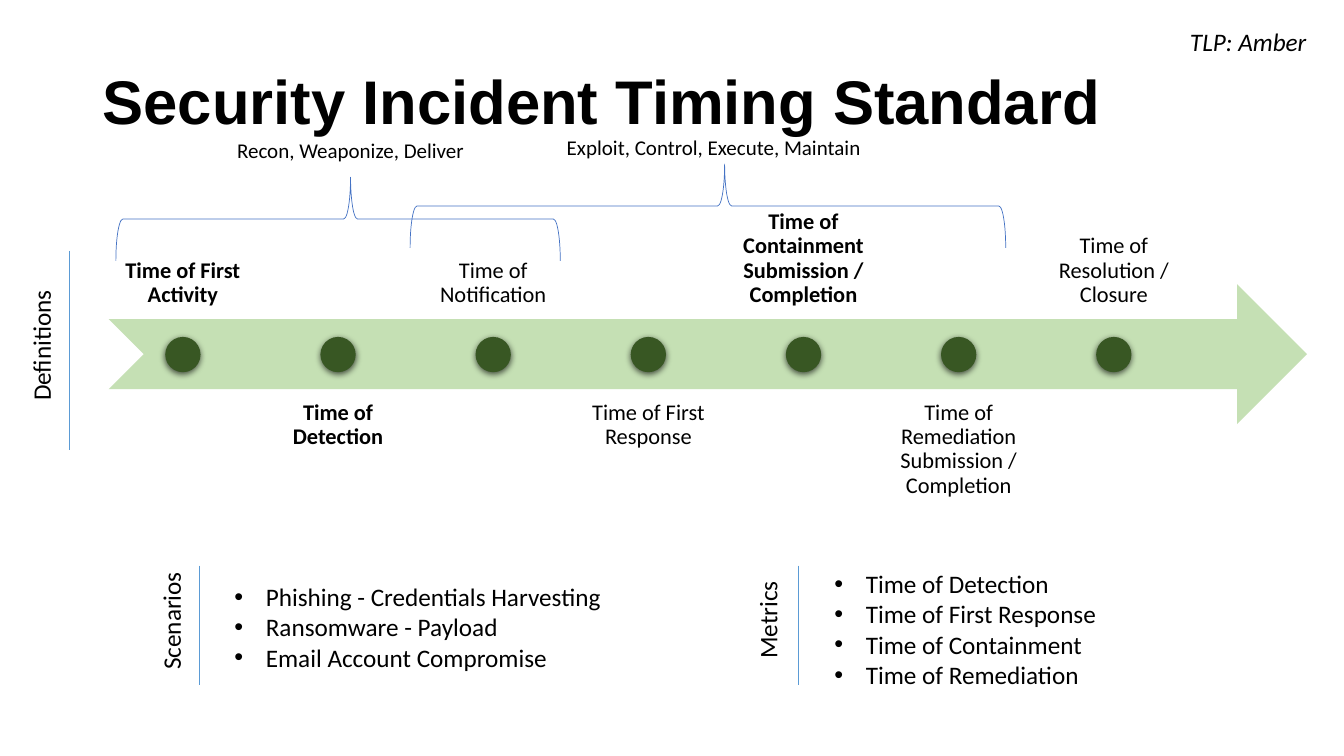
"""Build the security incident timing standard slide."""
import pptx
import pptx.dml.color
import pptx.enum.shapes
import pptx.enum.text
import pptx.oxml
import pptx.oxml.ns
import pptx.util

Cm = pptx.util.Cm
Pt = pptx.util.Pt
RGBColor = pptx.dml.color.RGBColor
SHAPE = pptx.enum.shapes.MSO_SHAPE
ANCHOR = pptx.enum.text.MSO_ANCHOR
ALIGN = pptx.enum.text.PP_ALIGN

BLACK = RGBColor(0x00, 0x00, 0x00)
LIGHT_GREEN = RGBColor(0xC5, 0xE0, 0xB4)
DARK_GREEN = RGBColor(0x38, 0x57, 0x23)
RULE_BLUE = RGBColor(0x5B, 0x9B, 0xD5)
BRACE_BLUE = RGBColor(0x44, 0x72, 0xC4)

TITLE = "Security Incident Timing Standard"
MARKING = "TLP: Amber"
MILESTONES = [
    ("Time of First Activity", True),
    ("Time of Detection", True),
    ("Time of Notification", False),
    ("Time of First Response", False),
    ("Time of Containment Submission / Completion", True),
    ("Time of Remediation Submission / Completion", False),
    ("Time of Resolution / Closure", False),
]
# Lengths below are centimetres.
SECTIONS = [
    {"name": "Definitions", "centre": (1.03, 6.58), "rule": (1.75, 6.32, 11.33)},
    {"name": "Scenarios", "centre": (4.31, 13.36), "rule": (5.03, 14.25, 17.27)},
    {"name": "Metrics", "centre": (19.34, 13.08), "rule": (20.12, 14.25, 17.27)},
]
LISTS = [
    ((5.66, 14.53, 9.86, 2.57),
     ["Phishing - Credentials Harvesting", "Ransomware - Payload",
      "Email Account Compromise"]),
    ((20.78, 14.2, 7.19, 3.33),
     ["Time of Detection", "Time of First Response", "Time of Containment",
      "Time of Remediation"]),
]
PHASES = [
    {"text": "Recon, Weaponize, Deliver", "box": (4.57, 0.86, 8.53, 3.53),
     "centre": (8.52, 5.52), "span": 11.2},
    {"text": "Exploit, Control, Execute, Maintain", "box": (11.18, 0.79, 13.61, 3.53),
     "centre": (17.84, 5.19), "span": 15.01},
]
BRACE_DEPTH = 2.11
SIDE_WIDTH, SIDE_HEIGHT = 7.54, 1.02
FIRST_CENTRE, PITCH, DOT = 4.61, 3.91, 0.89
LABEL_WIDTH, LABEL_HEIGHT = 3.74, 3.53
ABOVE_TOP, BELOW_TOP, DOT_TOP = 4.52, 9.8, 8.49

BODY = {"name": "Calibri", "size": Pt(18), "color": BLACK}
LABEL = {**BODY, "size": Pt(16)}
CAPTION = {**BODY, "size": Pt(15)}
HEADING = {"name": "Arial", "size": Pt(44), "color": BLACK, "bold": True}
PADDING = {f"margin_{side}": Cm(0.31) for side in ("left", "top", "right", "bottom")}
CENTRED = {"alignment": ALIGN.CENTER, "line_spacing": 0.9}

NAMESPACE = pptx.oxml.ns.nsdecls("a")
DOT_SHADOW = (
    f'<a:effectLst {NAMESPACE}><a:outerShdw blurRad="57150" dist="19050" '
    'dir="5400000" algn="ctr" rotWithShape="0"><a:srgbClr val="000000">'
    '<a:alpha val="63000"/></a:srgbClr></a:outerShdw></a:effectLst>')


def apply(target, values):
    for name, value in values.items():
        if name == "color":
            target.color.rgb = value
        else:
            setattr(target, name, value)


def add_text(page, place, lines, font, frame=None, layout=None, bullet=False):
    box = page.shapes.add_textbox(*map(Cm, place))
    apply(box.text_frame, {"word_wrap": True, **(frame or {})})
    for index, line in enumerate(lines):
        para = box.text_frame.paragraphs[0] if index == 0 else box.text_frame.add_paragraph()
        apply(para, layout or {})
        if bullet:
            properties = para._p.get_or_add_pPr()
            properties.set("marL", str(Cm(0.79)))
            properties.set("indent", str(-Cm(0.79)))
            properties.append(pptx.oxml.parse_xml(f'<a:buFont {NAMESPACE} typeface="Arial"/>'))
            properties.append(pptx.oxml.parse_xml(f'<a:buChar {NAMESPACE} char="•"/>'))
        span = para.add_run()
        span.text = line
        apply(span.font, font)
    return box


def add_filled(page, preset, place, color):
    shape = page.shapes.add_shape(preset, *map(Cm, place))
    shape.shadow.inherit = False
    shape.fill.solid()
    shape.fill.fore_color.rgb = color
    shape.line.fill.background()
    return shape


def add_timeline(page):
    add_filled(page, SHAPE.NOTCHED_RIGHT_ARROW, (2.74, 7.16, 30.2, 3.53), LIGHT_GREEN)
    for index, (text, bold) in enumerate(MILESTONES):
        centre = FIRST_CENTRE + index * PITCH
        below = index % 2 == 1
        top, anchor = (BELOW_TOP, ANCHOR.TOP) if below else (ABOVE_TOP, ANCHOR.BOTTOM)
        add_text(page, (centre - LABEL_WIDTH / 2, top, LABEL_WIDTH, LABEL_HEIGHT), [text],
                 {**LABEL, "bold": bold}, {**PADDING, "vertical_anchor": anchor}, CENTRED)
        dot = add_filled(page, SHAPE.OVAL, (centre - DOT / 2, DOT_TOP, DOT, DOT), DARK_GREEN)
        effects = dot._element.spPr.find(pptx.oxml.ns.qn("a:effectLst"))
        dot._element.spPr.replace(effects, pptx.oxml.parse_xml(DOT_SHADOW))


def add_section(page, section):
    x, top, bottom = map(Cm, section["rule"])
    rule = page.shapes.add_connector(pptx.enum.shapes.MSO_CONNECTOR.STRAIGHT, x, top, x, bottom)
    apply(rule.line, {"color": RULE_BLUE, "width": Pt(0.5)})
    rule._element.spPr.append(pptx.oxml.parse_xml(f"<a:effectLst {NAMESPACE}/>"))
    x, y = section["centre"]
    place = (x - SIDE_WIDTH / 2, y - SIDE_HEIGHT / 2, SIDE_WIDTH, SIDE_HEIGHT)
    add_text(page, place, [section["name"]], BODY).rotation = 270


def add_phase(page, phase):
    x, y = phase["centre"]
    place = (x - BRACE_DEPTH / 2, y - phase["span"] / 2, BRACE_DEPTH, phase["span"])
    brace = page.shapes.add_shape(SHAPE.LEFT_BRACE, *map(Cm, place))
    brace.shadow.inherit = False
    brace.rotation = 90
    brace.adjustments[0] = 0.083
    brace.adjustments[1] = 0.472
    brace.fill.background()
    apply(brace.line, {"color": BRACE_BLUE, "width": Pt(0.5)})
    add_text(page, phase["box"], [phase["text"]], CAPTION,
             {**PADDING, "vertical_anchor": ANCHOR.BOTTOM}, CENTRED)


def main():
    deck = pptx.Presentation()
    apply(deck, {"slide_width": Cm(33.87), "slide_height": Cm(19.05)})
    page = deck.slides.add_slide(deck.slide_layouts[6])
    add_text(page, (2.34, 0.58, 29.21, 4.11), [TITLE], HEADING,
             {"vertical_anchor": ANCHOR.MIDDLE}, {"line_spacing": 0.9})
    add_timeline(page)
    for section in SECTIONS:
        add_section(page, section)
    for place, lines in LISTS:
        add_text(page, place, lines, BODY, {"word_wrap": False}, bullet=True)
    add_text(page, (29.74, 0.53, 3.56, 1.02), [MARKING], {**BODY, "italic": True},
             {"word_wrap": False})
    for phase in PHASES:
        add_phase(page, phase)
    deck.save("out.pptx")


if __name__ == "__main__":
    main()
